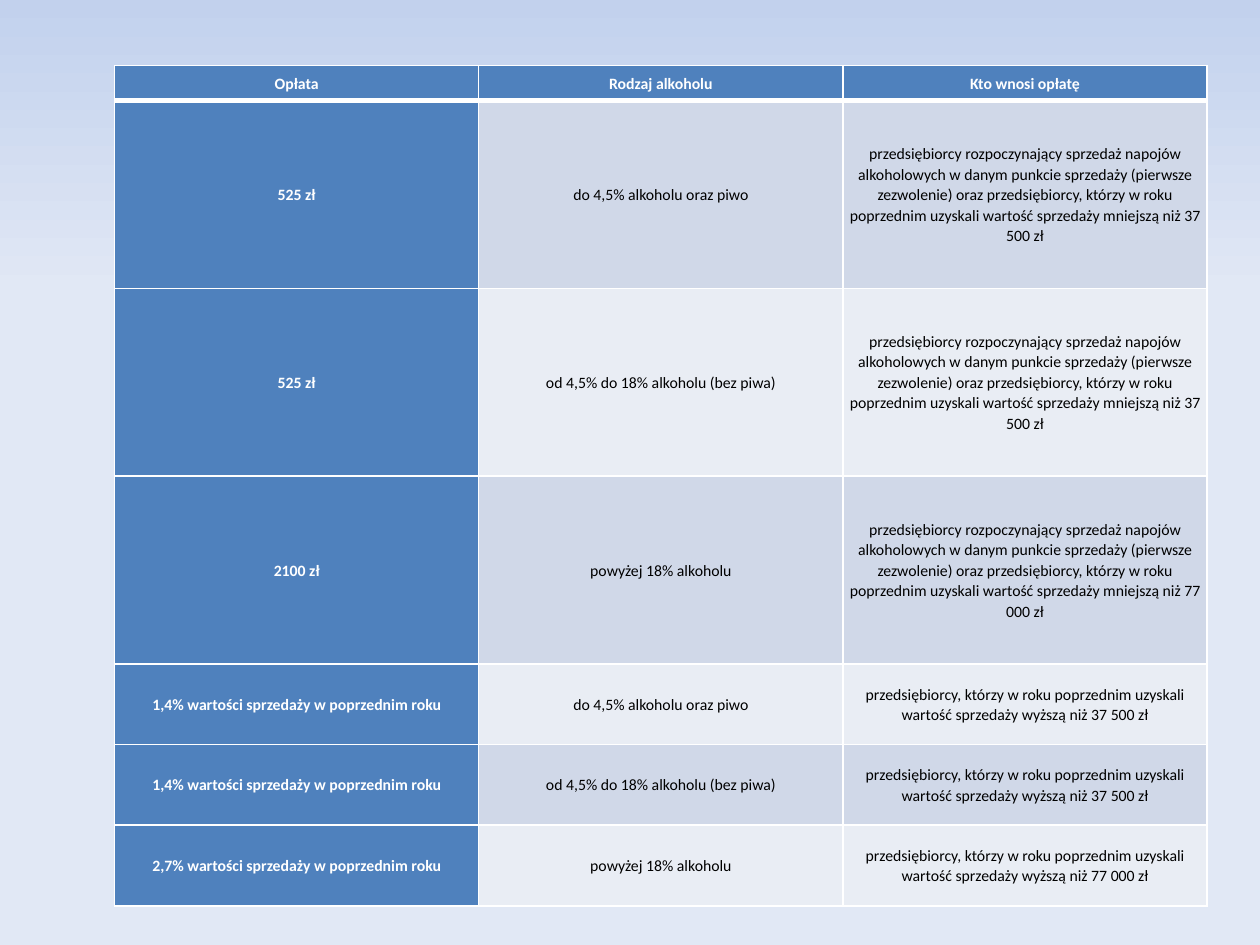
from pptx import Presentation
from pptx.dml.color import RGBColor as RGB
from pptx.enum.text import MSO_ANCHOR as Anchor, PP_ALIGN as Align
from pptx.util import Inches, Pt
from lxml.etree import SubElement as Sub
from pptx.oxml.ns import qn

COLORS = {
    "top": "C2D1ED",
    "base": "E1E8F5",
    "head": "4F81BD",
    "odd": "D0D8E8",
    "even": "E9EDF4",
    "white": "FFFFFF",
    "black": "000000",
}
HEADS = ("Opłata", "Rodzaj alkoholu", "Kto wnosi opłatę")
KINDS = (
    "do 4,5% alkoholu oraz piwo",
    "od 4,5% do 18% alkoholu (bez piwa)",
    "powyżej 18% alkoholu",
)
LIMITS = ("37 500 zł", "37 500 zł", "77 000 zł")
FEES = ("525 zł", "525 zł", "2100 zł")
RATES = ("1,4%", "1,4%", "2,7%")
START = (
    "przedsiębiorcy rozpoczynający sprzedaż napojów alkoholowych w danym "
    "punkcie sprzedaży (pierwsze zezwolenie) oraz przedsiębiorcy, którzy w "
    "roku poprzednim uzyskali wartość sprzedaży mniejszą niż "
)
LATER = (
    "przedsiębiorcy, którzy w roku poprzednim uzyskali wartość sprzedaży "
    "wyższą niż "
)
SHARE = " wartości sprzedaży w poprzednim roku"
HEIGHTS = [0.28] + [1.49] * 3 + [0.64] * 3
WIDTH = 2.89


def color(name):
    return RGB.from_string(COLORS[name])


def paint_back(slide):
    fill = slide.background.fill
    fill.gradient()
    fill.gradient_angle = 270
    for stop, name, place in zip(fill.gradient_stops, ("top", "base"), (0, 0.31)):
        stop.color.rgb = color(name)
        stop.position = place


def add_edges(cell, top, base):
    props = cell._tc.get_or_add_tcPr()
    for side, size in (("L", 1), ("R", 1), ("T", top), ("B", base)):
        line = Sub(props, qn(f"a:ln{side}"), w=str(Pt(size)))
        fill = Sub(line, qn("a:solidFill"))
        Sub(fill, qn("a:srgbClr"), val=COLORS["white"])


def fill_cell(cell, text, shade, strong):
    cell.fill.solid()
    cell.fill.fore_color.rgb = color(shade)
    cell.vertical_anchor = Anchor.MIDDLE
    cell.margin_left = cell.margin_right = Inches(0.01)
    cell.margin_top = cell.margin_bottom = Inches(0.01)
    para = cell.text_frame.paragraphs[0]
    para.alignment = Align.CENTER
    para.line_spacing = 1.07
    run = para.add_run()
    run.text = text
    run.font.name = "Calibri"
    run.font.size = Pt(9)
    run.font.bold = strong
    run.font.color.rgb = color("white" if strong else "black")


def list_rows():
    first = [(fee, kind, START + cap) for fee, kind, cap in zip(FEES, KINDS, LIMITS)]
    later = [
        (rate + SHARE, kind, LATER + cap)
        for rate, kind, cap in zip(RATES, KINDS, LIMITS)
    ]
    return [HEADS] + first + later


def add_fees(slide, rows):
    frame = slide.shapes.add_table(
        len(rows), len(HEADS), Inches(0.91), Inches(0.52),
        Inches(WIDTH * len(HEADS)), Inches(sum(HEIGHTS)),
    )
    table = frame.table
    for col in table.columns:
        col.width = Inches(WIDTH)
    for r, texts in enumerate(rows):
        table.rows[r].height = Inches(HEIGHTS[r])
        band = "odd" if r % 2 else "even"
        for c, text in enumerate(texts):
            strong = r == 0 or c == 0
            cell = table.cell(r, c)
            add_edges(cell, 3 if r == 1 else 1, 3 if r == 0 else 1)
            fill_cell(cell, text, "head" if strong else band, strong)


def main():
    deck = Presentation()
    deck.slide_width = Inches(10)
    deck.slide_height = Inches(7.5)
    slide = deck.slides.add_slide(deck.slide_layouts[6])
    paint_back(slide)
    add_fees(slide, list_rows())
    deck.save("out.pptx")


if __name__ == "__main__":
    main()
